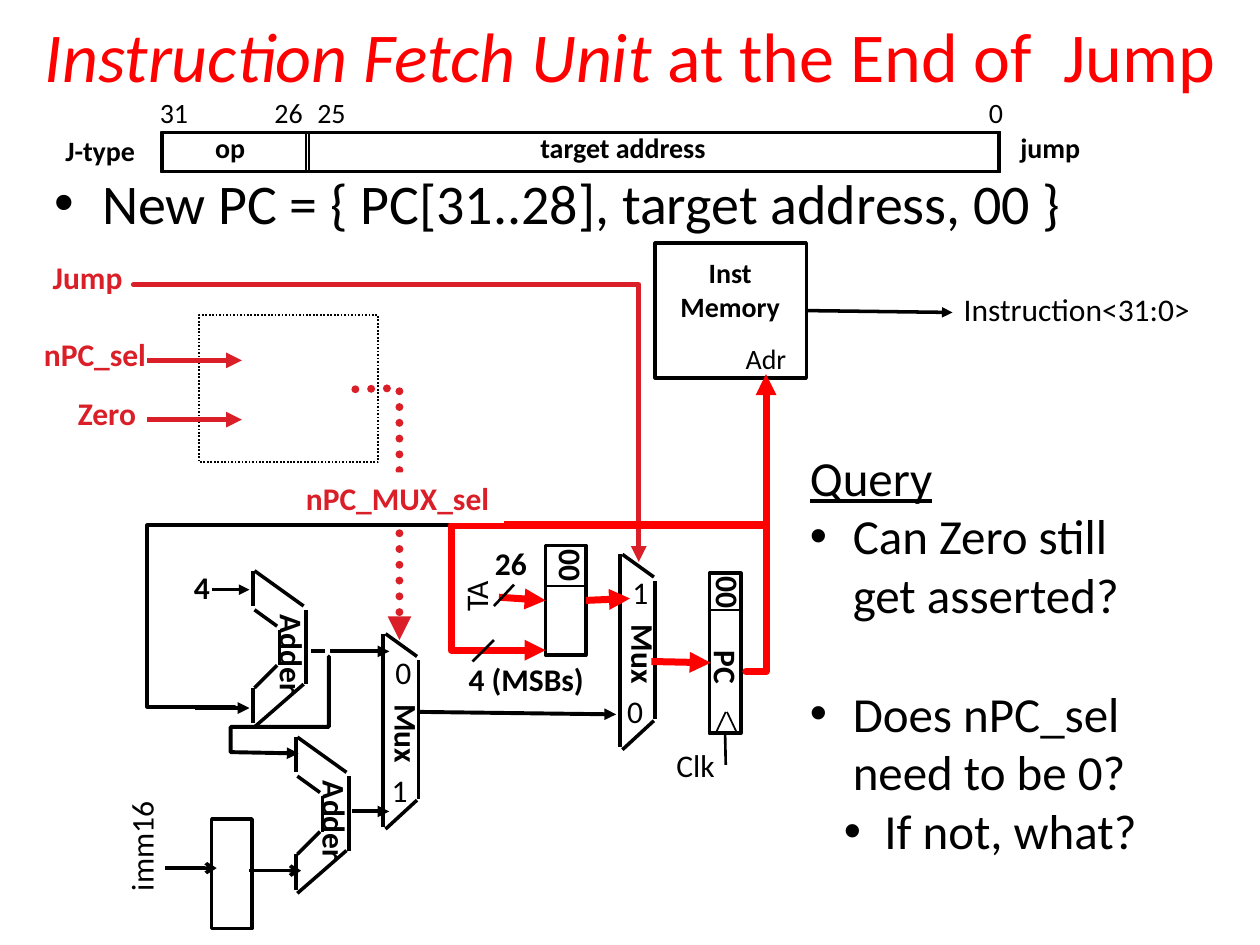
"""Build the slide on the instruction fetch unit at the end of a jump."""
from lxml.etree import SubElement
from pptx import Presentation
from pptx.dml.color import RGBColor
from pptx.enum.dml import MSO_LINE
from pptx.enum.shapes import MSO_CONNECTOR as CONNECTOR, MSO_SHAPE as SHAPE
from pptx.enum.text import MSO_ANCHOR, MSO_AUTO_SIZE as AUTOSIZE, PP_ALIGN as ALIGN
from pptx.oxml.ns import qn
from pptx.util import Inches, Pt

FONT = "Calibri"
COLORS = {"ink": "000000", "hot": "FF0000", "control": "DA1F28", "paper": "FFFFFF"}
TOP, LEFT, BOTTOM, RIGHT = range(4)

TITLE = [("Instruction Fetch Unit ", True), ("at the End of  Jump", False)]
FORMULA = "New PC = { PC[31..28], target address, 00 }"
QUERY = [
    ("Query", 0, 0, 0),
    ("Can Zero still\vget asserted?", 0.34, 0.34, 0),
    ("Does nPC_sel\vneed to be 0?", 0.34, 0.34, 34),
    ("If not, what?", 0.59, 0.32, 0),
]

BLOCKS = {
    "memory": (5.2, 1.93, 1.2, 1.07, 2),
    "pc": (5.63, 4.55, 0.25, 1.27, 2),
    "pc zeros": (5.64, 4.55, 0.24, 0.29, 1),
    "extender": (1.68, 6.5, 0.32, 0.87, 2),
    "selector": (1.58, 2.5, 1.42, 1.17, 1),
    "format": (1.29, 1.05, 6.64, 0.31, 2),
    "op": (1.28, 1.05, 1.15, 0.32, 1),
    "target": (2.45, 1.05, 5.49, 0.32, 1),
    "joiner": (4.33, 4.33, 0.32, 0.87, 2),
    "joiner zeros": (4.33, 4.33, 0.32, 0.32, 1),
}

ADDER_ORIGINS = [(2.01, 4.53), (2.35, 5.85)]
ADDER_EDGES = [
    ((0, 0), (0, 0.28)), ((0.01, 0), (0.4, 0.28)), ((0.01, 0.31), (0.19, 0.44)),
    ((0.21, 0.47), (0.21, 0.75)), ((0.42, 0.31), (0.42, 0.9)),
    ((0.01, 0.93), (0.19, 0.75)), ((0, 0.93), (0, 1.21)), ((0.01, 1.24), (0.4, 0.9)),
]
MUX_ORIGINS = [(3.04, 5.03), (4.92, 4.4)]
MUX_EDGES = [
    ((0, 0), (0, 1.53)), ((0.02, 0), (0.27, 0.18)),
    ((0.02, 1.55), (0.27, 1.32)), ((0.28, 0.21), (0.28, 1.31)),
]
UNITS = [
    (ADDER_ORIGINS, ADDER_EDGES, ("Adder", -0.11, 0.47, 0.84)),
    (MUX_ORIGINS, MUX_EDGES, ("Mux", -0.16, 0.61, 0.7)),
]

WIRES = [
    ((1.55, 5.62), (1.98, 5.62), "ink", 2.25, "triangle"),
    ((2.79, 6.44), (3.09, 6.44), "ink", 2.25, "triangle"),
    ((1.68, 4.68), (1.98, 4.68), "ink", 2, "triangle"),
    ((5.17, 5.25), (5.64, 5.26), "hot", 4, "triangle"),
    (("memory", RIGHT), (7.56, 2.48), "ink", 2, "triangle"),
    ((2.62, 5.17), (3.09, 5.17), "ink", 2.25, "triangle"),
    ((2.47, 5.17), (2.58, 5.17), "ink", 2.25, None),
    ((1.17, 3.33), (1.92, 3.33), "control", 3, "triangle"),
    ((1.17, 2.86), (1.92, 2.86), "control", 3, "triangle"),
    ((3.33, 5.65), (4.89, 5.67), "ink", 2.25, "triangle"),
    ((3.96, 4.74), ("joiner", LEFT), "hot", 4, "triangle"),
    (("joiner", RIGHT), (5, 4.75), "hot", 4, "triangle"),
    ((3.92, 5.08), (3.75, 5.25), "ink", 1.5, None),
    ((3.58, 4.17), (6.08, 4.17), "hot", 4.5, None),
    ((4.08, 4.64), (3.92, 4.81), "ink", 1.5, None),
    ((1.31, 6.89), (1.72, 6.89), "ink", 2, "arrow"),
    ((1.98, 6.91), (2.39, 6.91), "ink", 2, "arrow"),
    ((5.68, 5.82), (5.76, 5.65), "ink", 1, None),
    ((5.77, 5.65), (5.85, 5.82), "ink", 1, None),
    (("pc", BOTTOM), (5.76, 6.07), "ink", 1.5, None),
]

ROUTES = [
    ([(6.08, 4.17), (1.17, 4.17), (1.17, 5.61), (1.86, 5.61)], "ink", 2.25, None, False),
    ([(2.61, 5.21), (2.61, 5.77), (1.83, 5.77), (1.83, 5.97), (2.37, 5.98)],
     "ink", 2.25, "triangle", False),
    ([(5.92, 5.33), (6.08, 5.33), (6.08, 2.97)], "hot", 4, "triangle", False),
    ([(2.82, 3.09), (3.17, 3.08), (3.17, 5.08)], "control", 4.5, "triangle", True),
    ([(1.06, 2.26), (5.07, 2.26), (5.07, 4.46)], "control", 3, "triangle", False),
    ([(3.58, 4.17), (3.58, 5.16), (4.33, 5.16)], "hot", 4, "triangle", False),
]

LABEL_GROUPS = [
    (16, False, "ink", [
        ("Adr", 5.82, 2.66, 0.53, 0), ("0", 7.75, 0.71, 0.31, 0), ("26", 2.08, 0.71, 0.43, 0),
        ("31", 1.17, 0.71, 0.43, 0), ("25", 2.42, 0.71, 0.43, 0)]),
    (16, True, "ink", [
        ("Inst\nMemory", 5.29, 1.98, 1.01, 0), ("op", 1.61, 0.99, 0.44, 0),
        ("target address", 4.19, 0.99, 1.55, 0), ("J-type", 0.42, 1.01, 0.79, 0),
        ("jump", 8, 0.99, 0.7, 0)]),
    (18, False, "ink", [
        ("Clk", 5.27, 5.87, 0.51, 0), ("imm16", 0.66, 6.51, 0.92, 270),
        ("Instruction<31:0>", 7.55, 2.25, 2.01, 0), ("0", 3.04, 5.13, 0.33, 0),
        ("1", 3.01, 6.07, 0.33, 0), ("1", 4.92, 4.5, 0.33, 0),
        ("0", 4.88, 5.44, 0.33, 0), ("TA", 3.55, 4.53, 0.45, 270)]),
    (18, True, "ink", [
        ("PC", 5.53, 5.1, 0.47, 90), ("00", 5.52, 4.5, 0.45, 270), ("4", 1.44, 4.46, 0.33, 0),
        ("4 (MSBs)", 3.62, 5.19, 1.12, 0), ("00", 4.27, 4.28, 0.46, 270),
        ("26", 3.83, 4.27, 0.46, 0)]),
    (18, True, "control", [
        ("nPC_sel", 0.25, 2.61, 1.02, 0), ("Zero", 0.52, 3.08, 0.67, 0),
        ("nPC_MUX_sel", 2.33, 3.75, 1.67, 0), ("Jump", 0.32, 2, 0.76, 0)]),
]


def rgb(name):
    return RGBColor.from_string(COLORS[name])


def place(part, *box):
    part.left, part.top, part.width, part.height = map(Inches, box)


def style_font(font, size, color="ink", bold=False):
    font.name, font.size, font.bold = FONT, Pt(size), bold
    font.color.rgb = rgb(color)


def style_line(line, color, width, head=None, dotted=False):
    line.color.rgb, line.width = rgb(color), Pt(width)
    if dotted:
        line.dash_style = MSO_LINE.ROUND_DOT
    if head:
        SubElement(line._ln, qn("a:tailEnd"), type=head)


def set_bullet(paragraph, margin, hang):
    props = paragraph._p.get_or_add_pPr()
    props.set("marL", str(Inches(margin)))
    props.set("indent", str(-Inches(hang)))
    SubElement(props, qn("a:buFont"), typeface="Arial")
    SubElement(props, qn("a:buChar"), char="•")


def add_block(shapes, name, x, y, width, height, weight):
    block = shapes.add_shape(SHAPE.RECTANGLE, *map(Inches, (x, y, width, height)))
    block.shadow.inherit = False
    block.fill.background()
    style_line(block.line, "ink", weight, dotted=name == "selector")
    return block


def add_wire(shapes, blocks, start, end, color="ink", width=2, head=None):
    joined = [isinstance(tip[0], str) for tip in (start, end)]
    points = [(0, 0) if join else tip for join, tip in zip(joined, (start, end))]
    wire = shapes.add_connector(CONNECTOR.STRAIGHT, *(Inches(v) for tip in points for v in tip))
    for join, (name, site), connect in zip(
            joined, (start, end), (wire.begin_connect, wire.end_connect)):
        if join:
            connect(blocks[name], site)
    style_line(wire.line, color, width, head)
    SubElement(wire._element.spPr, qn("a:effectLst"))


def add_route(shapes, points, color, width, head, dotted):
    corners = [tuple(map(Inches, point)) for point in points]
    builder = shapes.build_freeform(*corners[0])
    builder.add_line_segments(corners[1:], close=False)
    route = builder.convert_to_shape()
    route.shadow.inherit = False
    route.fill.background()
    style_line(route.line, color, width, head, dotted)
    route.line._ln.set("cap", "rnd")


def add_label(shapes, text, x, y, width, turn, size=18, bold=True, color="ink"):
    height = 0.4 if size == 18 else 0.37
    label = shapes.add_textbox(*map(Inches, (x, y, width, height)))
    label.rotation = turn
    frame = label.text_frame
    frame.text, frame.word_wrap, frame.auto_size = text, False, AUTOSIZE.SHAPE_TO_FIT_TEXT
    for paragraph in frame.paragraphs:
        style_font(paragraph.font, size, color, bold)
        if "\n" in text:
            paragraph.alignment = ALIGN.CENTER
    if text == "nPC_MUX_sel":
        label.fill.solid()
        label.fill.fore_color.rgb = rgb("paper")


def add_headings(slide):
    title, body = slide.placeholders
    place(title, 0, 0.17, 10, 0.52)
    title.text_frame.auto_size = AUTOSIZE.NONE
    title.text_frame.vertical_anchor = MSO_ANCHOR.MIDDLE
    heading = title.text_frame.paragraphs[0]
    heading.alignment = ALIGN.CENTER
    style_font(heading.font, 40, "hot")
    for text, italic in TITLE:
        run = heading.add_run()
        run.text, run.font.italic = text, italic
    place(body, 0.33, 1.29, 9.42, 0.45)
    body.text_frame.text, body.text_frame.auto_size = FORMULA, AUTOSIZE.NONE
    style_font(body.text_frame.paragraphs[0].font, 32)
    set_bullet(body.text_frame.paragraphs[0], 0.38, 0.38)


def add_query(shapes):
    frame = shapes.add_textbox(*map(Inches, (6.33, 3.5, 3.5, 3.37))).text_frame
    frame.word_wrap = True
    frame.text = "\n".join(item[0] for item in QUERY)
    for paragraph, (_, margin, hang, gap) in zip(frame.paragraphs, QUERY):
        style_font(paragraph.font, 28)
        paragraph.font.underline = not hang
        paragraph.space_before = Pt(gap)
        if hang:
            set_bullet(paragraph, margin, hang)
    frame.paragraphs[-1].level = 1


def main():
    deck = Presentation()
    deck.slide_width, deck.slide_height = Inches(10), Inches(7.5)
    slide = deck.slides.add_slide(deck.slide_layouts[1])
    shapes = slide.shapes
    add_headings(slide)
    blocks = {name: add_block(shapes, name, *box) for name, box in BLOCKS.items()}
    for origins, edges, (text, dx, dy, width) in UNITS:
        for x, y in origins:
            for edge in edges:
                add_wire(shapes, blocks, *((x + px, y + py) for px, py in edge))
            add_label(shapes, text, x + dx, y + dy, width, 90)
    for route in ROUTES:
        add_route(shapes, *route)
    for wire in WIRES:
        add_wire(shapes, blocks, *wire)
    for size, bold, color, labels in LABEL_GROUPS:
        for label in labels:
            add_label(shapes, *label, size, bold, color)
    add_query(shapes)
    deck.save("out.pptx")


if __name__ == "__main__":
    main()
